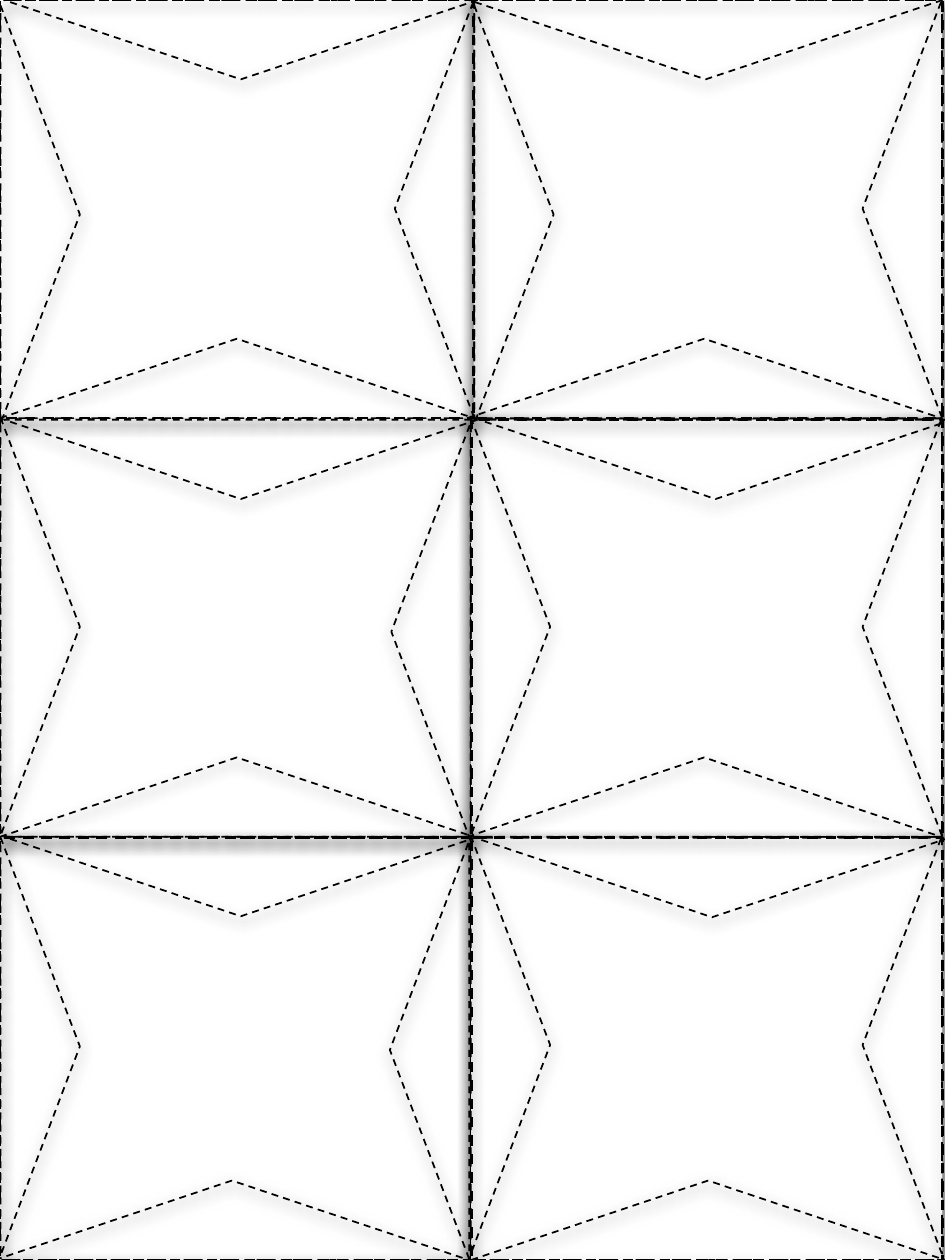
"""Build a sheet of six cards, each with four dashed triangular flaps."""
from dataclasses import dataclass

import lxml.etree
import pptx
import pptx.dml.color
import pptx.enum.dml
import pptx.enum.shapes
import pptx.oxml.ns
import pptx.shapes.autoshape
import pptx.slide
import pptx.util

Cm = pptx.util.Cm
Pt = pptx.util.Pt
MSO = pptx.enum.shapes.MSO_SHAPE


@dataclass(frozen=True)
class Theme:
    """Colours and line widths in points."""
    ink: str = "000000"
    paper: str = "FFFFFF"
    card_line: float = 1.5
    flap_line: float = 1


@dataclass(frozen=True)
class Shadow:
    """Shadow opacity in percent, blur and distance in points."""
    opacity: int = 75
    blur: float = 8
    distance: float = 3


@dataclass(frozen=True)
class Card:
    """Rectangle in centimetres."""
    x: float
    y: float
    w: float
    h: float
    filled: bool = True
    shadow: Shadow = Shadow()


@dataclass(frozen=True)
class FlapSide:
    """Flaps along one card side: base length, turn and visible top-left corners."""
    base: float
    turn: int
    corners: tuple[tuple[float, float], ...]


THEME = Theme()
FLAP_DEPTH = 1.6
CARDS = (
    Card(0, 16.89, 9.5, 8.51, filled=False),
    Card(0, 8.43, 9.5, 8.46, filled=False),
    Card(0, 0, 9.58, 8.43, shadow=Shadow(100, 0, 0)),
    Card(9.55, 0, 9.45, 8.43),
    Card(9.5, 8.46, 9.5, 8.43),
    Card(9.5, 16.89, 9.5, 8.51),
)
FLAP_SIDES = (
    FlapSide(9.55, 0, ((0, 15.27), (0, 6.83), (9.42, 6.83),
                       (9.42, 15.27), (-0.1, 23.8), (9.5, 23.8))),
    FlapSide(8.43, 270, ((7.96, -0.01), (7.89, 8.52), (7.86, 16.95),
                         (17.39, 16.85), (17.39, 8.42), (17.39, -0.01))),
    FlapSide(8.43, 90, ((0.01, 0.11), (9.49, 16.85), (0.01, 16.88),
                        (9.49, 8.42), (9.56, 0.11), (0.01, 8.42))),
    FlapSide(9.55, 180, ((0.08, 0), (9.45, 0), (0.08, 8.46),
                         (9.65, 8.46), (0.08, 16.87), (9.58, 16.89))),
)


def rgb(value: str) -> pptx.dml.color.RGBColor:
    """Return a colour from its hex value."""
    return pptx.dml.color.RGBColor.from_string(value)


def add_shadow(sp: pptx.shapes.autoshape.Shape, shadow: Shadow) -> None:
    """Give a shape a downward shadow."""
    qn = pptx.oxml.ns.qn
    sp.shadow.inherit = False
    effects = sp._element.spPr.find(qn("a:effectLst"))
    outer = lxml.etree.SubElement(
        effects, qn("a:outerShdw"), blurRad=str(Pt(shadow.blur)),
        dist=str(Pt(shadow.distance)), dir="5400000", rotWithShape="0")
    color = lxml.etree.SubElement(outer, qn("a:srgbClr"), val=THEME.ink)
    lxml.etree.SubElement(color, qn("a:alpha"), val=str(shadow.opacity * 1000))


def add_outline(s: pptx.slide.Slide, kind: MSO, x: float, y: float, w: float, h: float,
                line: float, filled: bool = False, shadow: Shadow = Shadow(),
                ) -> pptx.shapes.autoshape.Shape:
    """Draw a dashed shape with a shadow."""
    sp = s.shapes.add_shape(kind, Cm(x), Cm(y), Cm(w), Cm(h))
    if filled:
        sp.fill.solid()
        sp.fill.fore_color.rgb = rgb(THEME.paper)
    else:
        sp.fill.background()
    sp.line.color.rgb = rgb(THEME.ink)
    sp.line.width = Pt(line)
    sp.line.dash_style = pptx.enum.dml.MSO_LINE.DASH
    add_shadow(sp, shadow)
    return sp


def add_card(s: pptx.slide.Slide, card: Card) -> None:
    """Draw one card."""
    add_outline(s, MSO.RECTANGLE, card.x, card.y, card.w, card.h,
                THEME.card_line, card.filled, card.shadow)


def add_flaps(s: pptx.slide.Slide, side: FlapSide) -> None:
    """Draw the flaps of one side, turned about their centres."""
    shift = (side.base - FLAP_DEPTH) / 2 if side.turn % 180 else 0
    for x, y in side.corners:
        sp = add_outline(s, MSO.ISOSCELES_TRIANGLE, x - shift, y + shift,
                         side.base, FLAP_DEPTH, THEME.flap_line)
        sp.rotation = side.turn


def main() -> None:
    """Build and save the sheet."""
    prs = pptx.Presentation()
    prs.slide_width, prs.slide_height = Cm(19.05), Cm(25.4)
    s = prs.slides.add_slide(prs.slide_layouts[6])
    for card in CARDS:
        add_card(s, card)
    for side in FLAP_SIDES:
        add_flaps(s, side)
    prs.save("out.pptx")


if __name__ == "__main__":
    main()
